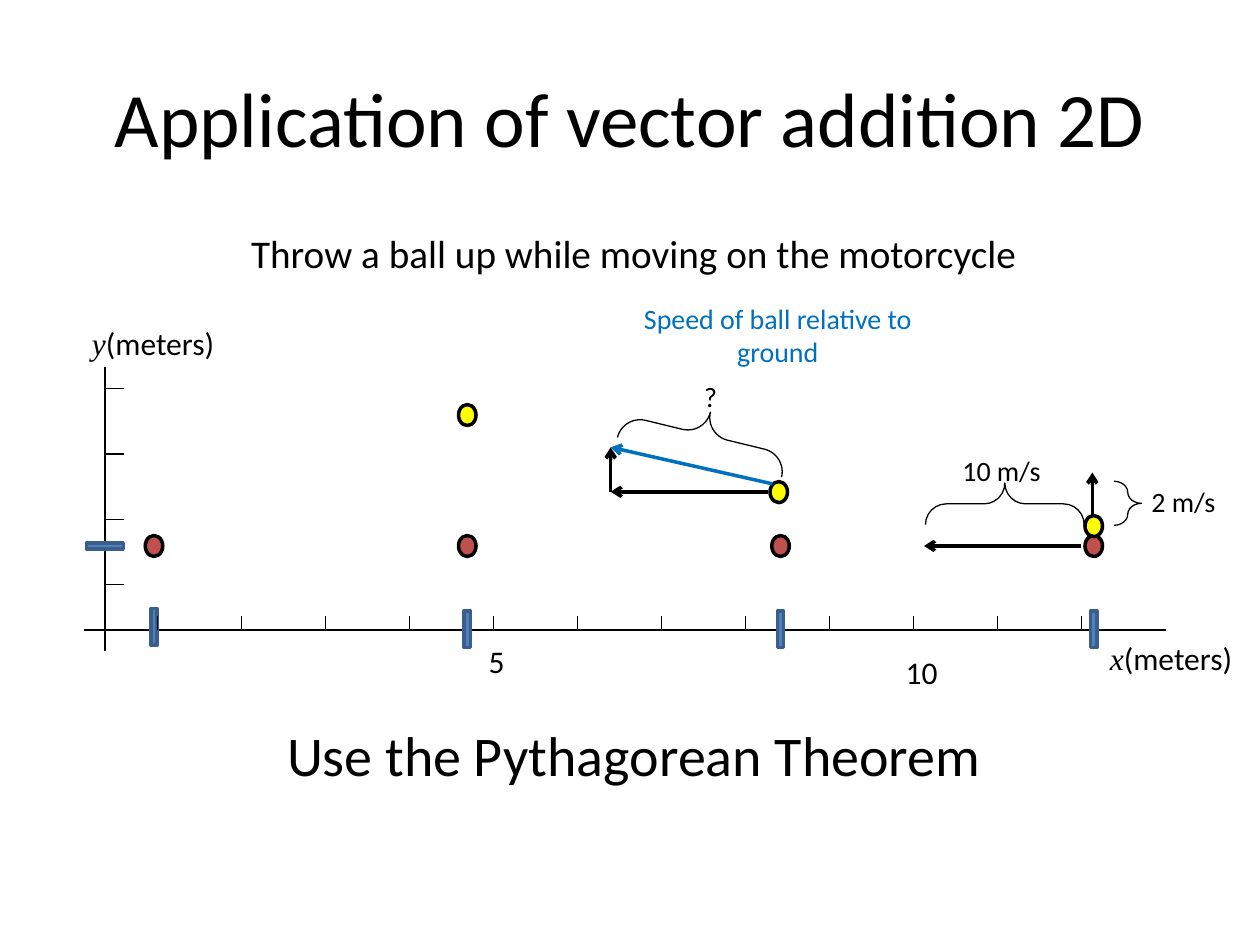
from dataclasses import dataclass

from lxml import etree
from pptx import Presentation
from pptx.dml.color import RGBColor
from pptx.enum.shapes import MSO_CONNECTOR, MSO_SHAPE
from pptx.enum.text import MSO_ANCHOR, MSO_AUTO_SIZE, PP_ALIGN
from pptx.oxml.ns import qn
from pptx.util import Pt

STRAIGHT = MSO_CONNECTOR.STRAIGHT
OVAL, RECTANGLE, BRACE = MSO_SHAPE.OVAL, MSO_SHAPE.RECTANGLE, MSO_SHAPE.LEFT_BRACE
TOP, MIDDLE = MSO_ANCHOR.TOP, MSO_ANCHOR.MIDDLE
CENTER, LEFT = PP_ALIGN.CENTER, PP_ALIGN.LEFT
GROW, FIXED = MSO_AUTO_SIZE.SHAPE_TO_FIT_TEXT, MSO_AUTO_SIZE.NONE


@dataclass(frozen=True)
class Theme:
    black = RGBColor(0x00, 0x00, 0x00)
    red = RGBColor(0xC0, 0x50, 0x4D)
    yellow = RGBColor(0xFF, 0xFF, 0x00)
    marker = RGBColor(0x4F, 0x81, 0xBD)
    marker_edge = RGBColor(0x3A, 0x5F, 0x8C)
    blue = RGBColor(0x00, 0x70, 0xC0)
    font = "Calibri"
    variable_font = "Times New Roman"
    title = 44
    conclusion = 32
    subtitle = 22.4
    axis = 18
    note = 16
    thin = 0.75
    thick = 2


THEME = Theme()

AXIS_X, AXIS_Y = 60, 360
POSITIONS = [88 + 179 * i for i in range(4)]
MOTORCYCLE_Y = 312
MARKER_YS = [358.2, 359.6, 359.6, 359.6]
BALLS = [(POSITIONS[3], 300.6), (445, 281.2), (POSITIONS[1], 237.2)]
AXES = [((AXIS_X, 210), (AXIS_X, 372)), ((666, AXIS_Y), (48, AXIS_Y))]
Y_TICKS = [((70.6, 222 + 37.4 * i), (AXIS_X, 222 + 37.4 * i)) for i in range(4)]
X_TICKS = [((90 + 48 * i, 352), (90 + 48 * i, AXIS_Y)) for i in range(11 + 1)]
ARROWS = [
    ((618, 312), (528, 312), THEME.black),
    ((349, 281), (349, 255.6), THEME.black),
    ((439, 281), (349, 281), THEME.black),
    ((441.4, 276.5), (349, 255.6), THEME.blue),
    ((624.2, 295.2), (624.2, 270), THEME.black),
]
BRACES = [
    ((562.3, 242.6, 23.8, 90.7), 90),
    ((389.5, 200.2, 26.6, 96.5), 103.6),
    ((636.5, 275, 15.8, 25.2), 180),
]
CENTERED_TEXTS = [
    ("Throw a ball up while moving on the motorcycle", (122.4, 127.4, 480, 54), THEME.subtitle, THEME.black),
    ("Speed of ball relative to ground", (348.5, 168.5, 192, 54), THEME.note, THEME.blue),
    ("Use the Pythagorean Theorem", (122.4, 408.2, 480, 54), THEME.conclusion, THEME.black),
]
AXIS_NAMES = [
    ("x", "(meters)", (627.1, 361.4, 85, 28.8)),
    ("y", "(meters)", (45.4, 181.4, 85.7, 28.8)),
]
LABELS = [
    ("5", (272.2, 363.6, 23.8, 28.8), THEME.axis),
    ("10", (510.5, 369.4, 33.1, 28.8), THEME.axis),
    ("10 m/s", (542.9, 255.6, 59.8, 26.6), THEME.note),
    ("?", (395.3, 213.1, 22.3, 26.6), THEME.note),
    ("2 m/s", (650.9, 273.6, 51.1, 26.6), THEME.note),
]


def points(values):
    return [Pt(value) for value in values]


def add_figure(slide, preset, box, edge, width, fill=None):
    figure = slide.shapes.add_shape(preset, *points(box))
    figure.shadow.inherit = False
    if fill is None:
        figure.fill.background()
    else:
        figure.fill.solid()
        figure.fill.fore_color.rgb = fill
    figure.line.color.rgb = edge
    figure.line.width = Pt(width)
    return figure


def add_dot(slide, x, y, fill):
    add_figure(slide, OVAL, (x - 5, y - 6, 10, 12), THEME.black, THEME.thick, fill)


def add_marker(slide, x, y, width, height):
    box = (x - width / 2, y - height / 2, width, height)
    add_figure(slide, RECTANGLE, box, THEME.marker_edge, THEME.thick, THEME.marker)


def add_line(slide, start, end, color=THEME.black, width=THEME.thin, arrow=False):
    line = slide.shapes.add_connector(STRAIGHT, *points(start + end))
    line.line.color.rgb = color
    line.line.width = Pt(width)
    if arrow:
        etree.SubElement(line.line._get_or_add_ln(), qn("a:tailEnd"), type="arrow")
    etree.SubElement(line._element.spPr, qn("a:effectLst"))


def add_text(slide, runs, box, size, color=THEME.black, align=LEFT, anchor=TOP, wrap=False):
    frame = slide.shapes.add_textbox(*points(box)).text_frame
    frame.word_wrap = wrap
    frame.auto_size = FIXED if wrap else GROW
    frame.vertical_anchor = anchor
    paragraph = frame.paragraphs[0]
    paragraph.alignment = align
    paragraph.font.size = Pt(size)
    paragraph.font.name = THEME.font
    paragraph.font.color.rgb = color
    for words in runs:
        paragraph.add_run().text = words
    return paragraph


def main():
    deck = Presentation()
    deck.slide_width, deck.slide_height = Pt(720), Pt(540)
    slide = deck.slides.add_slide(deck.slide_layouts[6])

    add_text(slide, ["Application of vector addition 2D"], (36, 21.6, 648, 90),
             THEME.title, align=CENTER, anchor=MIDDLE, wrap=True)
    for x in POSITIONS:
        add_dot(slide, x, MOTORCYCLE_Y, THEME.red)
    for start, end in AXES:
        add_line(slide, start, end)
    add_marker(slide, AXIS_X, MOTORCYCLE_Y, 21, 3.6)
    for x, y in zip(POSITIONS, MARKER_YS):
        add_marker(slide, x, y, 3.6, 21)
    for start, end in Y_TICKS + X_TICKS:
        add_line(slide, start, end)
    for x, y in BALLS:
        add_dot(slide, x, y, THEME.yellow)
    for start, end, color in ARROWS:
        add_line(slide, start, end, color, THEME.thick, arrow=True)
    for box, angle in BRACES:
        brace = add_figure(slide, BRACE, box, THEME.black, THEME.thin)
        brace.adjustments[0] = 0.5
        brace.rotation = angle
    for words, box, size, color in CENTERED_TEXTS:
        paragraph = add_text(slide, [words], box, size, color, CENTER, wrap=True)
        paragraph.space_before = Pt(size * 0.2)
    for variable, unit, box in AXIS_NAMES:
        letter = add_text(slide, [variable, unit], box, THEME.axis).runs[0]
        letter.font.name = THEME.variable_font
        letter.font.italic = True
    for words, box, size in LABELS:
        add_text(slide, [words], box, size)

    deck.save("out.pptx")


if __name__ == "__main__":
    main()
